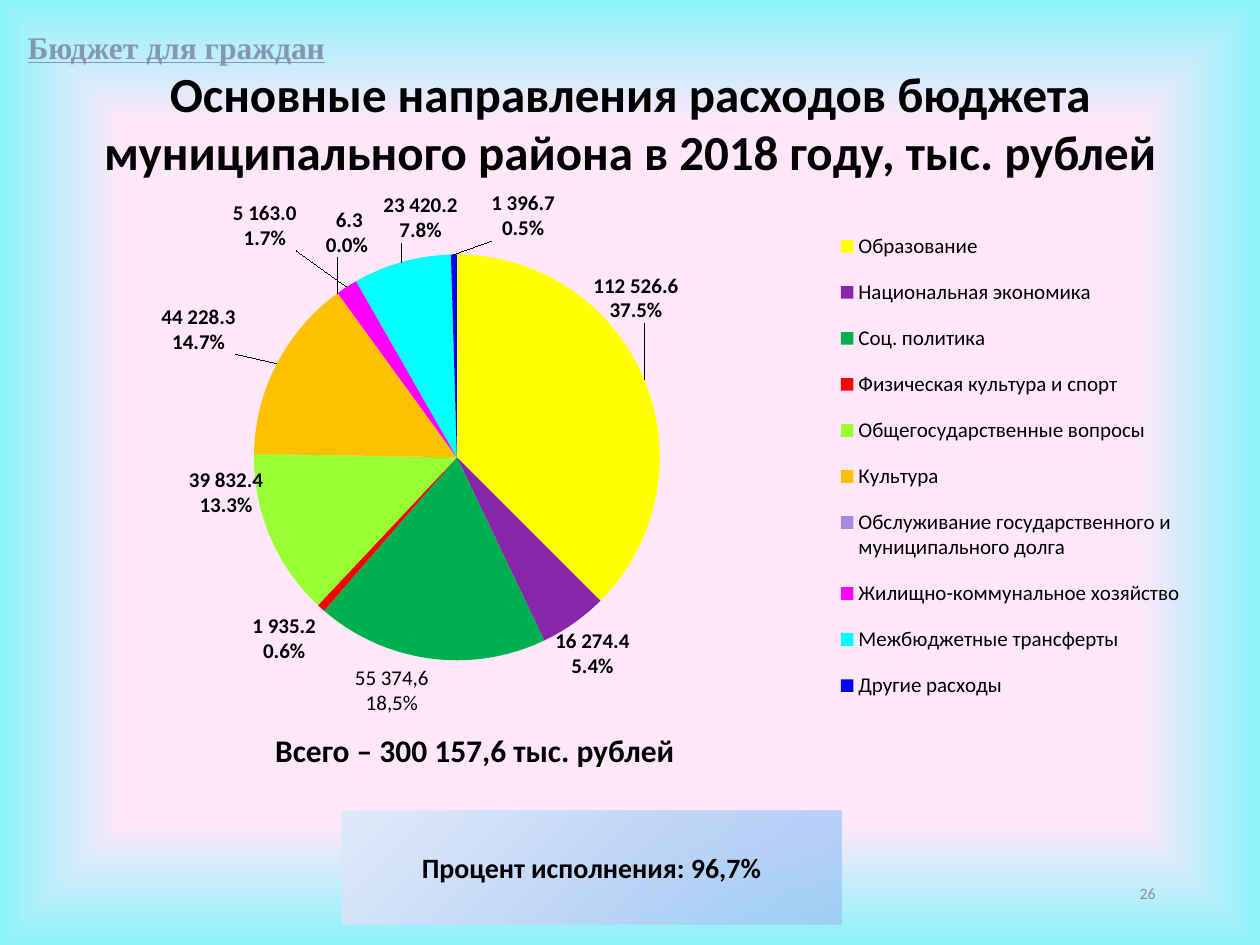
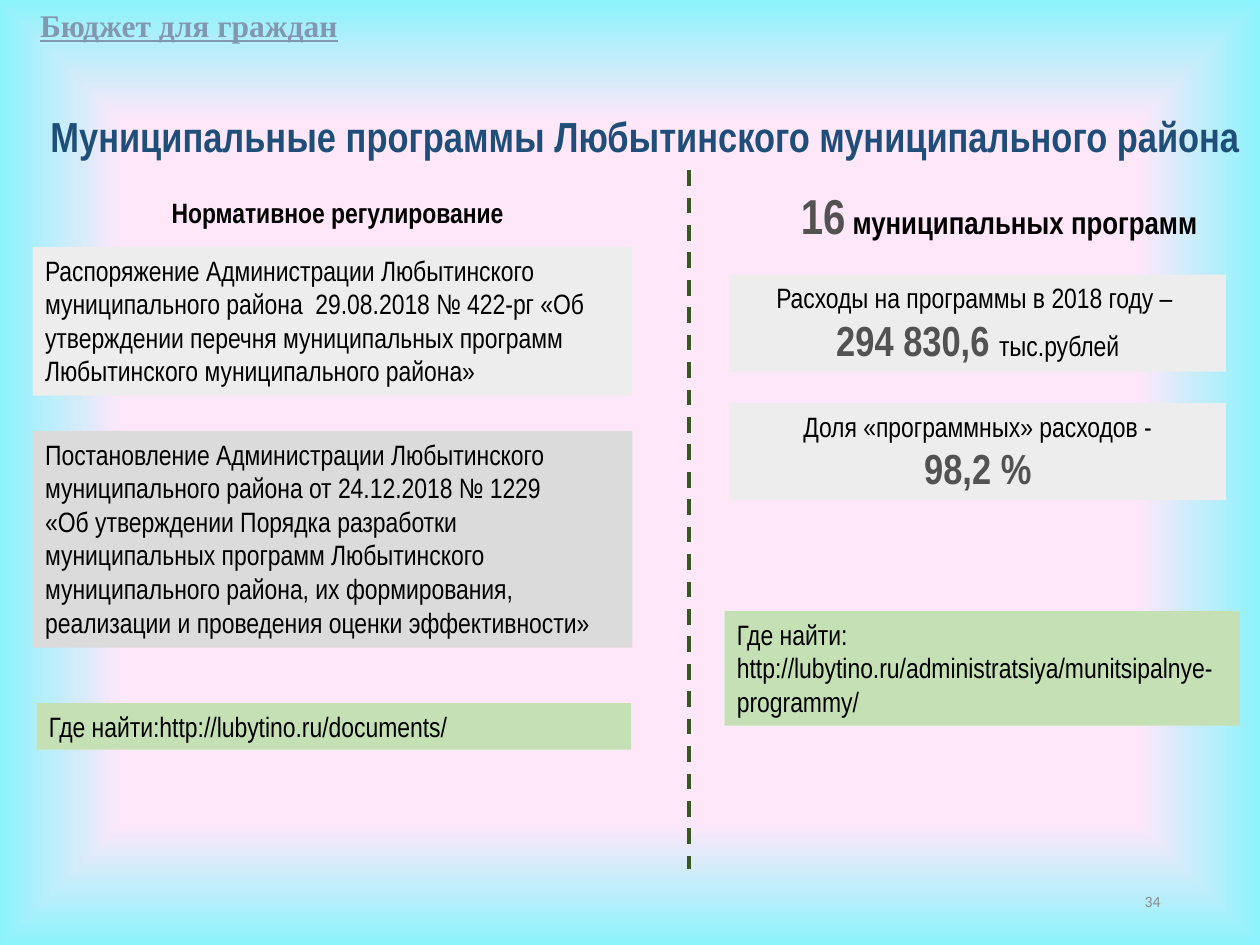
from typing import NamedTuple, Optional

import pptx
import pptx.chart.data
import pptx.dml.color
import pptx.enum.chart
import pptx.enum.dml
import pptx.enum.shapes
import pptx.enum.text
import pptx.oxml
import pptx.oxml.ns
import pptx.util

RGBColor = pptx.dml.color.RGBColor
ALIGN = pptx.enum.text.PP_ALIGN
ANCHOR = pptx.enum.text.MSO_ANCHOR
NAMESPACES = pptx.oxml.ns.nsdecls("a", "c")

COLUMNS, ROWS = 100, 75
CELL = pptx.util.Inches(0.1)

BLACK = RGBColor(0x00, 0x00, 0x00)
PINK = RGBColor(0xFF, 0xE7, 0xFA)
CYAN = RGBColor(0x8B, 0xF3, 0xFB)
SLATE = RGBColor(0x84, 0x97, 0xB0)
NAVY = RGBColor(0x1F, 0x4E, 0x79)
NUMBER_GREY = RGBColor(0x8C, 0x8C, 0x8C)
ACCENT_GREY = RGBColor(0x52, 0x52, 0x52)
LIGHT_GREY = RGBColor(0xED, 0xED, 0xED)
MID_GREY = RGBColor(0xDB, 0xDB, 0xDB)
GREEN = RGBColor(0xC5, 0xE0, 0xB4)
DARK_GREEN = RGBColor(0x38, 0x57, 0x23)
BLUE_DEEP = RGBColor(0x9A, 0xC3, 0xF5)
BLUE_MID = RGBColor(0xC2, 0xD8, 0xF8)
BLUE_PALE = RGBColor(0xE1, 0xEB, 0xFB)


class Box(NamedTuple):
    """A place on the slide, in grid columns and rows."""
    column: float
    row: float
    columns: float
    rows: float

    def lengths(self) -> list[int]:
        return [round(value * CELL) for value in self]


class Style(NamedTuple):
    name: str
    size: float
    color: RGBColor = BLACK
    bold: bool = False
    underline: bool = False


class Run(NamedTuple):
    text: str
    style: Style


class Panel(NamedTuple):
    box: Box
    paragraphs: list[list[Run]]
    fill: Optional[RGBColor] = None
    align: ALIGN = ALIGN.LEFT
    anchor: ANCHOR = ANCHOR.TOP
    wrap: bool = True


class Stop(NamedTuple):
    percent: int
    color: RGBColor
    opacity: int = 100


class Expense(NamedTuple):
    name: str
    amount: float
    color: RGBColor
    label_shift: tuple[float, float] = (0, 0)
    label_text: str = ""


CALIBRI_TITLE = Style("Calibri", 28, bold=True)
NARROW_TITLE = Style("Arial Narrow", 24, NAVY, bold=True)
HEADER = Style("Times New Roman", 18, SLATE, bold=True, underline=True)
PAGE_NUMBER = Style("Calibri", 9, NUMBER_GREY)
BODY = Style("Arial Narrow", 16)
BODY_BOLD = BODY._replace(bold=True)
FIGURE = Style("Arial Narrow", 24, ACCENT_GREY, bold=True)

EXPENSES = [
    Expense("Образование", 112526.6, RGBColor(0xFF, 0xFF, 0x00), (-0.05, -0.09)),
    Expense("Национальная экономика", 16274.4, RGBColor(0x87, 0x26, 0xAA), (-0.02, 0)),
    Expense("Соц. политика", 55374.5, RGBColor(0x00, 0xB0, 0x50),
            label_text="55 374,6\n18,5%"),
    Expense("Физическая культура и спорт", 1935.2, RGBColor(0xFF, 0x00, 0x00)),
    Expense("Общегосударственные вопросы", 39832.4, RGBColor(0x99, 0xFF, 0x33), (0, -0.12)),
    Expense("Культура", 44228.3, RGBColor(0xFF, 0xC0, 0x00), (-0.03, -0.01)),
    Expense("Обслуживание государственного и муниципального долга", 6.3,
            RGBColor(0xA7, 0x8A, 0xDC), (0.03, -0.05)),
    Expense("Жилищно-коммунальное хозяйство", 5163.0, RGBColor(0xFF, 0x00, 0xFF), (-0.04, -0.05)),
    Expense("Межбюджетные трансферты", 23420.2, RGBColor(0x00, 0xFF, 0xFF), (0.05, -0.02)),
    Expense("Другие расходы", 1396.7, RGBColor(0x00, 0x00, 0xFF), (0.06, -0.01)),
]


def set_font(font, style: Style) -> None:
    font.name = style.name
    font.size = pptx.util.Pt(style.size)
    font.bold = style.bold
    font.underline = style.underline
    font.color.rgb = style.color


def set_gradient(fill, element, stops: list[Stop], path: str, focus: dict[str, int]) -> None:
    """Give a fill inside element a path gradient that starts at focus (percent)."""
    fill.gradient()
    gradient = element.find(".//" + pptx.oxml.ns.qn("a:gradFill"))
    stop_xml = "".join(
        f'<a:gs pos="{stop.percent * 1000}"><a:srgbClr val="{stop.color}">'
        f'<a:alpha val="{stop.opacity * 1000}"/></a:srgbClr></a:gs>' for stop in stops)
    sides = " ".join(f'{side}="{share * 1000}"' for side, share in focus.items())
    new_gradient = pptx.oxml.parse_xml(
        f'<a:gradFill {NAMESPACES} rotWithShape="1"><a:gsLst>{stop_xml}</a:gsLst>'
        f'<a:path path="{path}"><a:fillToRect {sides}/></a:path></a:gradFill>')
    gradient.getparent().replace(gradient, new_gradient)


def write_text(shape, panel: Panel) -> None:
    frame = shape.text_frame
    frame.word_wrap = panel.wrap
    frame.vertical_anchor = panel.anchor
    for index, runs in enumerate(panel.paragraphs):
        paragraph = frame.add_paragraph() if index else frame.paragraphs[0]
        paragraph.alignment = panel.align
        same_style = len({run.style for run in runs}) == 1
        if same_style:
            set_font(paragraph.font, runs[0].style)
        for part in runs:
            run = paragraph.add_run()
            run.text = part.text
            if not same_style:
                set_font(run.font, part.style)


def add_panel(slide, panel: Panel):
    """Add a filled rectangle, or a plain text box when the panel has no fill."""
    if panel.fill is None:
        shape = slide.shapes.add_textbox(*panel.box.lengths())
    else:
        shape = slide.shapes.add_shape(
            pptx.enum.shapes.MSO_SHAPE.RECTANGLE, *panel.box.lengths())
        shape.shadow.inherit = False
        shape.fill.solid()
        shape.fill.fore_color.rgb = panel.fill
        shape.line.fill.background()
    write_text(shape, panel)
    return shape


def add_slide(presentation, title: Panel, header_at: tuple, number: str, number_at: tuple):
    """Add a slide with its title, running header and page number."""
    slide = presentation.slides.add_slide(presentation.slide_layouts[5])
    shape = slide.shapes.title
    shape.left, shape.top, shape.width, shape.height = title.box.lengths()
    write_text(shape, title)
    shape.text_frame.auto_size = pptx.enum.text.MSO_AUTO_SIZE.NONE
    add_panel(slide, Panel(Box(*header_at, 25.9, 4),
                           [[Run("Бюджет для граждан", HEADER)]], wrap=False))
    add_panel(slide, Panel(Box(*number_at, 22.5, 4), [[Run(number, PAGE_NUMBER)]],
                           align=ALIGN.RIGHT, anchor=ANCHOR.MIDDLE))
    return slide


def layout_xml(inner: bool = False, **shares: float) -> str:
    """Return a manual chart layout; shares are x, y, w and h."""
    target = '<c:layoutTarget val="inner"/>' if inner else ""
    modes = "" if "w" not in shares else '<c:xMode val="edge"/><c:yMode val="edge"/>'
    values = "".join(f'<c:{key} val="{value}"/>' for key, value in shares.items())
    return (f"<c:layout {NAMESPACES}><c:manualLayout>{target}{modes}{values}"
            "</c:manualLayout></c:layout>")


def labels_xml() -> str:
    """Return the value-and-percent labels, each shifted from its slice."""
    def font_xml(tag: str, bold: int) -> str:
        return (f'<a:{tag} sz="1200" b="{bold}"><a:solidFill><a:srgbClr val="{BLACK}"/>'
                f'</a:solidFill><a:latin typeface="Calibri"/></a:{tag}>')

    number_format = '<c:numFmt formatCode="0.0%" sourceLinked="0"/>'
    text_format = (f'<c:txPr><a:bodyPr/><a:p><a:pPr>{font_xml("defRPr", 1)}</a:pPr>'
                   '<a:endParaRPr lang="ru-RU"/></a:p></c:txPr>')
    flags = {"LegendKey": 0, "Val": 1, "CatName": 0, "SerName": 0, "Percent": 1, "BubbleSize": 0}
    shown = ('<c:dLblPos val="outEnd"/>'
             + "".join(f'<c:show{flag} val="{value}"/>' for flag, value in flags.items())
             + "<c:separator>\n</c:separator>")
    points = ""
    for index, expense in enumerate(EXPENSES):
        shift_x, shift_y = expense.label_shift
        layout = layout_xml(x=shift_x, y=shift_y) if shift_x or shift_y else ""
        text, formats = "", number_format + text_format
        if expense.label_text:
            lines = "".join(f'<a:p><a:r>{font_xml("rPr", 0)}<a:t>{line}</a:t></a:r></a:p>'
                            for line in expense.label_text.split("\n"))
            text, formats = f"<c:tx><c:rich><a:bodyPr/>{lines}</c:rich></c:tx>", number_format
        points += f'<c:dLbl><c:idx val="{index}"/>{layout}{text}{formats}{shown}</c:dLbl>'
    return (f"<c:dLbls {NAMESPACES}>{points}{number_format}{text_format}{shown}"
            '<c:showLeaderLines val="1"/></c:dLbls>')


def add_expense_pie(slide, box: Box) -> None:
    data = pptx.chart.data.CategoryChartData(number_format=r"#\ ##0.0")
    data.categories = [expense.name for expense in EXPENSES]
    data.add_series("Series 1", [expense.amount for expense in EXPENSES])
    chart = slide.shapes.add_chart(
        pptx.enum.chart.XL_CHART_TYPE.PIE, *box.lengths(), data).chart
    set_font(chart.font, Style("Calibri", 10))
    chart.has_title = False
    chart.has_legend = True
    chart.legend.position = pptx.enum.chart.XL_LEGEND_POSITION.RIGHT
    chart.legend.include_in_layout = False
    set_font(chart.legend.font, Style("Calibri", 12))

    plot = chart.plots[0]
    plot.vary_by_categories = True
    series = plot.series[0]
    for index, expense in enumerate(EXPENSES):
        fill = series.points[index].format.fill
        fill.solid()
        fill.fore_color.rgb = expense.color

    qn = pptx.oxml.ns.qn
    series._element.find(qn("c:cat")).addprevious(pptx.oxml.parse_xml(labels_xml()))
    plot_area = chart._chartSpace.find(".//" + qn("c:plotArea"))
    for old_layout in plot_area.findall(qn("c:layout")):
        plot_area.remove(old_layout)
    plot_area.insert(0, pptx.oxml.parse_xml(
        layout_xml(inner=True, x=0.005, y=0.11, w=0.672, h=0.681)))
    legend = chart.legend._element
    for old_layout in legend.findall(qn("c:layout")):
        legend.remove(old_layout)
    legend.find(qn("c:legendPos")).addnext(pptx.oxml.parse_xml(
        layout_xml(x=0.66, y=0.04, w=0.32, h=0.85)))


def add_dashed_divider(slide, column: float, top: float, bottom: float) -> None:
    divider = slide.shapes.add_connector(
        pptx.enum.shapes.MSO_CONNECTOR.STRAIGHT,
        *[round(value * CELL) for value in (column, top, column, bottom)])
    divider.line.color.rgb = DARK_GREEN
    divider.line.width = pptx.util.Pt(2.25)
    divider.line.dash_style = pptx.enum.dml.MSO_LINE.DASH
    divider._element.spPr.append(pptx.oxml.parse_xml(f"<a:effectLst {NAMESPACES}/>"))


def build_expenses_slide(presentation) -> None:
    title = Panel(Box(0, 4.5, COLUMNS, 6.9), [[Run(
        "Основные направления расходов бюджета муниципального района в 2018 году, тыс. рублей",
        CALIBRI_TITLE)]], align=ALIGN.CENTER)
    slide = add_slide(presentation, title, (1.2, 1.7), "26", (70.2, 68.9))
    add_expense_pie(slide, Box(5, 15, 91.7, 47.3))
    add_panel(slide, Panel(Box(19.3, 57.5, 36.8, 4), [[Run(
        "Всего – 300 157,6 тыс. рублей", Style("Calibri", 18, bold=True))]], align=ALIGN.CENTER))
    result = add_panel(slide, Panel(
        Box(27.1, 64.3, 39.7, 9.1),
        [[Run("Процент исполнения: 96,7%", Style("Calibri", 16, bold=True))]],
        BLUE_MID, ALIGN.CENTER, ANCHOR.MIDDLE))
    set_gradient(result.fill, result._element,
                 [Stop(0, BLUE_DEEP, 70), Stop(50, BLUE_MID), Stop(100, BLUE_PALE)],
                 "circle", {"l": 100, "t": 100})


def build_programmes_slide(presentation) -> None:
    title = Panel(Box(1.2, 9.2, COLUMNS, 4.1), [[Run(
        "Муниципальные программы Любытинского муниципального района", NARROW_TITLE)]],
        align=ALIGN.CENTER)
    slide = add_slide(presentation, title, (2.2, 0), "34", (70.6, 69.5))
    slide.shapes.title.text_frame.margin_top = pptx.util.Inches(0.08)
    slide.shapes.title.text_frame.paragraphs[0].line_spacing = pptx.util.Pt(20)
    add_dashed_divider(slide, 54.7, 13.5, 69)

    for panel in [
        Panel(Box(7.9, 14.3, 37.8, 5.1), [[Run("Нормативное регулирование", BODY_BOLD)]],
              align=ALIGN.CENTER, anchor=ANCHOR.MIDDLE),
        Panel(Box(2.6, 19.6, 47.6, 11.8), [[Run(
            "Распоряжение Администрации Любытинского муниципального района  29.08.2018 "
            "№ 422-рг «Об утверждении перечня муниципальных программ Любытинского "
            "муниципального района»", BODY)]], LIGHT_GREY),
        Panel(Box(2.6, 34.2, 47.6, 17.2), [
            [Run("Постановление Администрации Любытинского муниципального района "
                 "от 24.12.2018 № 1229", BODY)],
            [Run("«Об утверждении Порядка разработки муниципальных программ Любытинского "
                 "муниципального района, их формирования, реализации и проведения оценки "
                 "эффективности»", BODY)]], MID_GREY),
        Panel(Box(2.9, 55.8, 47.2, 3.7),
              [[Run("Где найти:http://lubytino.ru/documents/", BODY)]], GREEN),
        Panel(Box(61.4, 13.9, 35.8, 6.3), [[
            Run("16", FIGURE._replace(size=28)),
            Run(" муниципальных программ", BODY_BOLD._replace(size=18))]],
            align=ALIGN.CENTER, anchor=ANCHOR.MIDDLE),
        Panel(Box(57.9, 21.8, 39.4, 7.7), [
            [Run("Расходы на программы в 2018 году – ", BODY)],
            [Run("294 830,6 ", FIGURE), Run("тыс.рублей", BODY)]], LIGHT_GREY, ALIGN.CENTER),
        Panel(Box(57.9, 32, 39.4, 7.7), [
            [Run("Доля «программных» расходов -", BODY)],
            [Run("98,2 %", FIGURE)]], LIGHT_GREY, ALIGN.CENTER),
        Panel(Box(57.5, 48.5, 40.9, 9.1), [[Run(
            "Где найти: http://lubytino.ru/administratsiya/munitsipalnye-programmy/", BODY)]],
            GREEN),
    ]:
        add_panel(slide, panel)


def main() -> None:
    presentation = pptx.Presentation()
    presentation.slide_width = COLUMNS * CELL
    presentation.slide_height = ROWS * CELL
    master = presentation.slide_master
    set_gradient(master.background.fill, master._element, [Stop(74, PINK), Stop(100, CYAN)],
                 "shape", dict.fromkeys("ltrb", 50))
    build_expenses_slide(presentation)
    build_programmes_slide(presentation)
    presentation.save("out.pptx")


if __name__ == "__main__":
    main()
